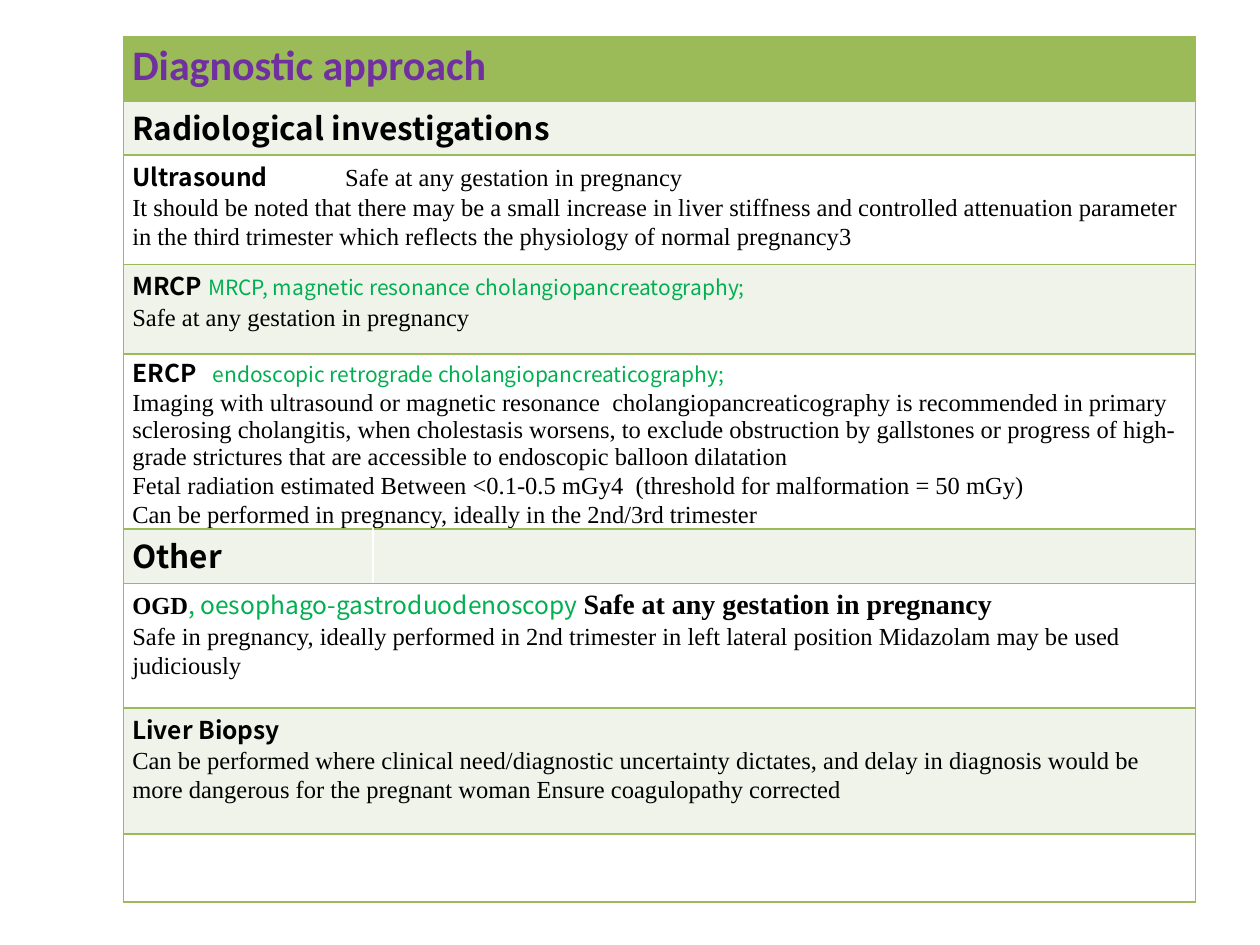
from lxml import etree
from pptx import Presentation
from pptx.dml.color import RGBColor
from pptx.oxml.ns import qn
from pptx.util import Inches, Pt

THEME = {
    "head": "9BBB59", "band": "EFF3EA", "plain": "FFFFFF", "line": "9BBB59",
    "title": (24, "Calibri", "7030A0", True),
    "part": (18, "Noto Sans CJK KR", "000000", True),
    "name": (14, "Noto Sans CJK KR", "000000", True),
    "note": (12, "Noto Sans CJK KR", "00B050", False),
    "term": (14, "Noto Sans CJK KR", "00B050", False),
    "body": (14, "Times New Roman", "000000", False),
    "bold": (14, "Times New Roman", "000000", True),
    "safe": (16, "Times New Roman", "000000", True),
}
SAFE = "Safe at any gestation in pregnancy"

ROWS = [
    (0.51, "head", [[("title", "Diagnostic approach")]]),
    (0.43, "band", [[("part", "Radiological investigations")]]),
    (0.87, "plain", [
        [("name", "Ultrasound"), ("body", "\t" + SAFE)],
        [("body", "It should be noted that there may be a small increase in liver stiffness and controlled attenuation parameter in the third trimester which reflects the physiology of normal pregnancy3")],
    ]),
    (0.71, "band", [
        [("name", "MRCP "), ("note", "MRCP, magnetic resonance cholangiopancreatography;")],
        [("body", SAFE)],
    ]),
    (1.39, "plain", [
        [("name", "ERCP"), ("note", "\tendoscopic retrograde cholangiopancreaticography;")],
        [("body", "Imaging with ultrasound or magnetic resonance  cholangiopancreaticography is recommended in primary sclerosing cholangitis, when cholestasis worsens, to exclude obstruction by gallstones or progress of high-grade strictures that are accessible to endoscopic balloon dilatation")],
        [("body", "Fetal radiation estimated Between <0.1-0.5 mGy4  (threshold for malformation = 50 mGy)")],
        [("body", "Can be performed in pregnancy, ideally in the 2nd/3rd trimester")],
    ]),
    (0.43, "band", [[("part", "Other")]]),
    (0.99, "plain", [
        [("bold", "OGD"), ("term", ", oesophago-gastroduodenoscopy "), ("safe", SAFE)],
        [("body", "Safe in pregnancy, ideally performed in 2nd trimester in left lateral position Midazolam may be used")],
        [("body", "judiciously")],
    ]),
    (1, "band", [
        [("name", "Liver Biopsy")],
        [("body", "Can be performed where clinical need/diagnostic uncertainty dictates, and delay in diagnosis would be")],
        [("body", "more dangerous for the pregnant woman Ensure coagulopathy corrected")],
    ]),
    (0.54, "plain", []),
]
TABS = {"Ultrasound": 1.69, "ERCP": 0.64}
SINGLE = ("ERCP", "Imaging")


def frame(cell, sides, fill):
    props = cell._tc.get_or_add_tcPr()
    for side in sides:
        line = etree.SubElement(props, qn("a:ln" + side), w=str(Pt(1)))
        solid = etree.SubElement(line, qn("a:solidFill"))
        etree.SubElement(solid, qn("a:srgbClr"), val=THEME["line"])
    cell.fill.solid()
    cell.fill.fore_color.rgb = RGBColor.from_string(THEME[fill])


def write(para, parts):
    first = parts[0][1]
    para.line_spacing = 1 if first.startswith(SINGLE) else 1.07
    if first in TABS:
        tabs = etree.SubElement(para._p.get_or_add_pPr(), qn("a:tabLst"))
        etree.SubElement(tabs, qn("a:tab"), pos=str(Inches(TABS[first])), algn="l")
    for style, words in parts:
        run = para.add_run()
        run.text = words
        size, face, color, bold = THEME[style]
        run.font.size, run.font.name, run.font.bold = Pt(size), face, bold
        run.font.color.rgb = RGBColor.from_string(color)
        for tag in ("a:ea", "a:cs"):
            etree.SubElement(run.font._element, qn(tag), typeface=face)


deck = Presentation()
deck.slide_width, deck.slide_height = Inches(10), Inches(7.5)
slide = deck.slides.add_slide(deck.slide_layouts[6])
total = sum(row[0] for row in ROWS)
table = slide.shapes.add_table(
    len(ROWS), 2, Inches(0.98), Inches(0.29), Inches(8.51), Inches(total)).table
table.columns[0].width, table.columns[1].width = Inches(1.98), Inches(6.53)

for i, (height, fill, paras) in enumerate(ROWS):
    table.rows[i].height = Inches(height)
    left, right = table.cell(i, 0), table.cell(i, 1)
    split = paras == [[("part", "Other")]]
    frame(left, "LTB" if split else "LRTB", fill)
    frame(right, "RTB", fill)
    if not split:
        left.merge(right)
    for cell in (left, right):
        cell.margin_left = cell.margin_right = Inches(0.07)
        cell.margin_top = cell.margin_bottom = 0
    for j, parts in enumerate(paras):
        box = left.text_frame
        write(box.add_paragraph() if j else box.paragraphs[0], parts)

deck.save("out.pptx")
